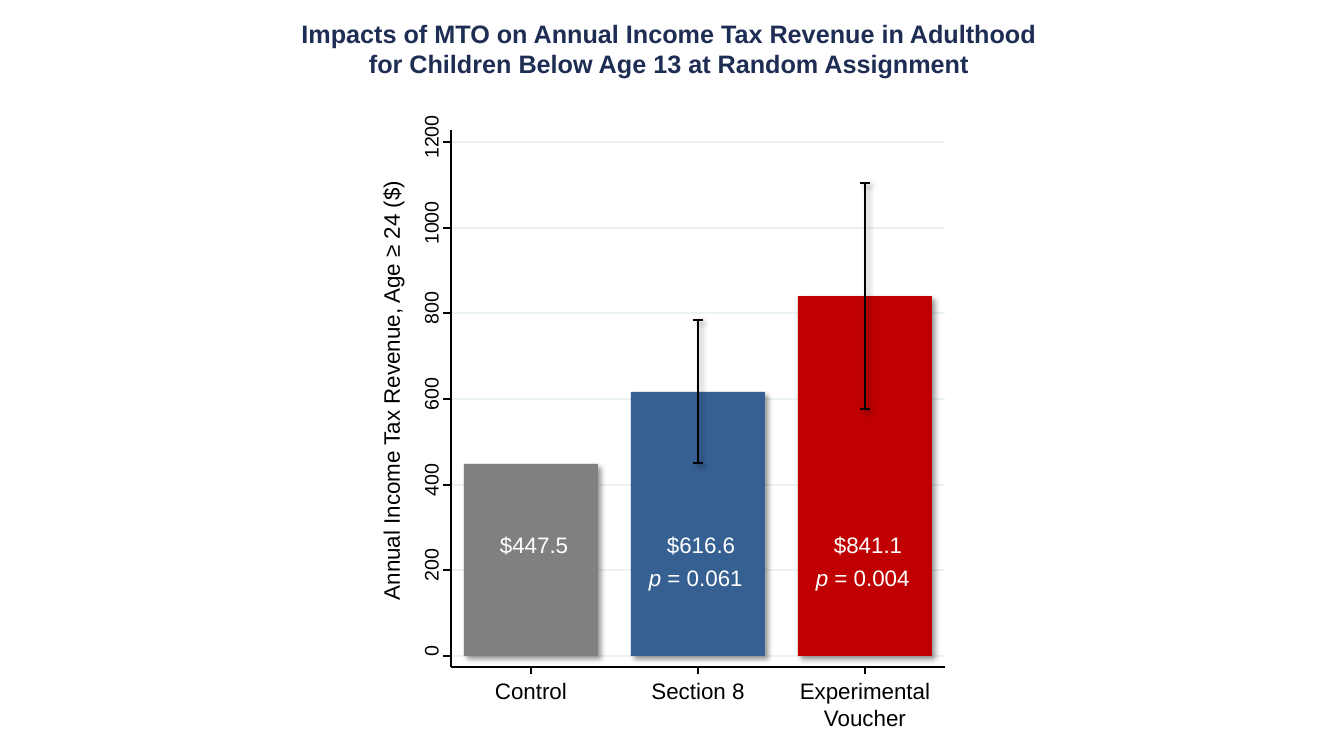
from dataclasses import dataclass

from lxml import etree
from pptx import Presentation
from pptx import util as u
from pptx.dml.color import RGBColor
from pptx.enum import shapes, text
from pptx.oxml import ns

PX = 914400 / 100.8
NAVY = RGBColor(0x1E, 0x2D, 0x53)
BLACK = RGBColor(0, 0, 0)
WHITE = RGBColor(0xFF, 0xFF, 0xFF)
GRID = RGBColor(0xEA, 0xF2, 0xF3)
GRAY = RGBColor(0x80, 0x80, 0x80)
BLUE = RGBColor(0x37, 0x60, 0x92)
RED = RGBColor(0xC0, 0, 0)

TITLE = ["Impacts of MTO on Annual Income Tax Revenue in Adulthood",
         "for Children Below Age 13 at Random Assignment"]
GROUPS = [
    (["Control"], 447.5, GRAY, None, None),
    (["Section 8"], 616.6, BLUE, 167, "0.061"),
    (["Experimental", "Voucher"], 841.1, RED, 263.5, "0.004"),
]
AXIS_X, AXIS_RIGHT = 451, 945
AXIS_TOP, AXIS_Y = 130, 667
ZERO_Y, TOP_VALUE_Y, TOP_VALUE = 656, 142, 1200
FIRST_BAR, BAR_STEP, BAR_WIDTH = 531, 167, 134


def px(length):
    return u.Emu(round(length * PX))


def value_y(value):
    return round(ZERO_Y - value * (ZERO_Y - TOP_VALUE_Y) / TOP_VALUE)


def bar_center(index):
    return FIRST_BAR + BAR_STEP * index


def write(frame, lines, font, size, color, bold=False, align=text.PP_ALIGN.CENTER):
    for index, line in enumerate(lines):
        paragraph = frame.paragraphs[0] if index == 0 else frame.add_paragraph()
        paragraph.alignment = align
        for words, italic in [(line, False)] if isinstance(line, str) else line:
            run = paragraph.add_run()
            run.text = words
            run.font.name = font
            run.font.size = u.Pt(size)
            run.font.bold = bold
            run.font.italic = italic
            run.font.color.rgb = color


@dataclass
class BarSlide:
    slide: object
    font: str = "Arial"
    label_size: int = 16
    axis_weight: float = 0.88
    mark_weight: float = 1.25

    def title(self, lines, left, top, width, height):
        shape = self.slide.shapes.title
        shape.left, shape.top = px(left), px(top)
        shape.width, shape.height = px(width), px(height)
        frame = shape.text_frame
        frame.auto_size = text.MSO_AUTO_SIZE.NONE
        frame.vertical_anchor = text.MSO_ANCHOR.TOP
        write(frame, lines, self.font, 18, NAVY, bold=True)

    def effects(self, shape, shadow):
        effects = etree.SubElement(shape._element.spPr, ns.qn("a:effectLst"))
        if shadow:
            outer = etree.SubElement(
                effects, ns.qn("a:outerShdw"), blurRad=str(u.Pt(4)),
                dist=str(u.Pt(3)), dir="2700000", algn="tl", rotWithShape="0")
            color = etree.SubElement(outer, ns.qn("a:srgbClr"), val=str(BLACK))
            etree.SubElement(color, ns.qn("a:alpha"), val="40000")

    def line(self, x1, y1, x2, y2, color=BLACK, weight=None, shadow=False):
        line = self.slide.shapes.add_connector(
            shapes.MSO_CONNECTOR.STRAIGHT, px(x1), px(y1), px(x2), px(y2))
        line.line.color.rgb = color
        line.line.width = u.Pt(weight or self.axis_weight)
        self.effects(line, shadow)

    def bar(self, center, value, color):
        top = value_y(value)
        bar = self.slide.shapes.add_shape(
            shapes.MSO_SHAPE.RECTANGLE, px(center - BAR_WIDTH / 2), px(top),
            px(BAR_WIDTH), px(ZERO_Y - top))
        bar.fill.solid()
        bar.fill.fore_color.rgb = color
        bar.line.fill.background()
        self.effects(bar, True)

    def error_bar(self, center, value, margin):
        low, high = value_y(value - margin), value_y(value + margin)
        self.line(center, high, center, low, weight=self.mark_weight, shadow=True)
        for y in (low, high):
            self.line(center - 5, y, center + 5, y,
                      weight=self.mark_weight, shadow=True)

    def label(self, lines, center, top, width, height, size=None, color=BLACK,
              rotation=0, inset=False, align=text.PP_ALIGN.CENTER):
        box = self.slide.shapes.add_textbox(
            px(center - width / 2), px(top), px(width), px(height))
        box.rotation = rotation
        frame = box.text_frame
        frame.word_wrap = inset
        if not inset:
            frame.margin_left = frame.margin_right = 0
            frame.margin_top = frame.margin_bottom = 0
        write(frame, lines, self.font, size or self.label_size, color, align=align)

    def value_axis(self):
        self.line(AXIS_X, AXIS_Y, AXIS_X, AXIS_TOP)
        for value in range(0, TOP_VALUE + 1, 200):
            y = value_y(value)
            self.line(AXIS_X, y, AXIS_X - 8, y)
            self.label([str(value)], 431, y - 17, 11 * len(str(value)), 24,
                       size=14, rotation=270)
        self.label(["Annual Income Tax Revenue, Age ≥ 24 ($)"], 391, 377, 420, 27,
                   rotation=270)

    def grid(self):
        for value in range(0, TOP_VALUE + 1, 200):
            y = value_y(value)
            self.line(AXIS_X, y, AXIS_RIGHT, y, GRID, self.mark_weight)

    def category_axis(self):
        self.line(AXIS_X, AXIS_Y, AXIS_RIGHT, AXIS_Y)
        for index, (name, *_) in enumerate(GROUPS):
            center = bar_center(index)
            self.line(center, AXIS_Y, center, AXIS_Y + 7)
            self.label(name, center, 677, 11 * max(map(len, name)), 27 * len(name))

    def bar_text(self, center, value, p_value):
        self.label([f"${value}"], center + 3, 526, BAR_WIDTH, 37,
                   color=WHITE, inset=True)
        if p_value:
            self.label([[("p", True), (f" = {p_value}", False)]], center + 16, 559,
                       150, 37, color=WHITE, inset=True, align=text.PP_ALIGN.LEFT)


def main():
    presentation = Presentation()
    presentation.slide_width = px(1344)
    presentation.slide_height = px(756)
    page = BarSlide(presentation.slides.add_slide(presentation.slide_layouts[5]))
    page.title(TITLE, 165, 13, 1008, 72)
    page.grid()
    for index, (_, value, color, _, _) in enumerate(GROUPS):
        page.bar(bar_center(index), value, color)
    for index, (_, value, _, margin, p_value) in enumerate(GROUPS):
        if margin:
            page.error_bar(bar_center(index), value, margin)
        page.bar_text(bar_center(index), value, p_value)
    page.value_axis()
    page.category_axis()
    presentation.save("out.pptx")


if __name__ == "__main__":
    main()
